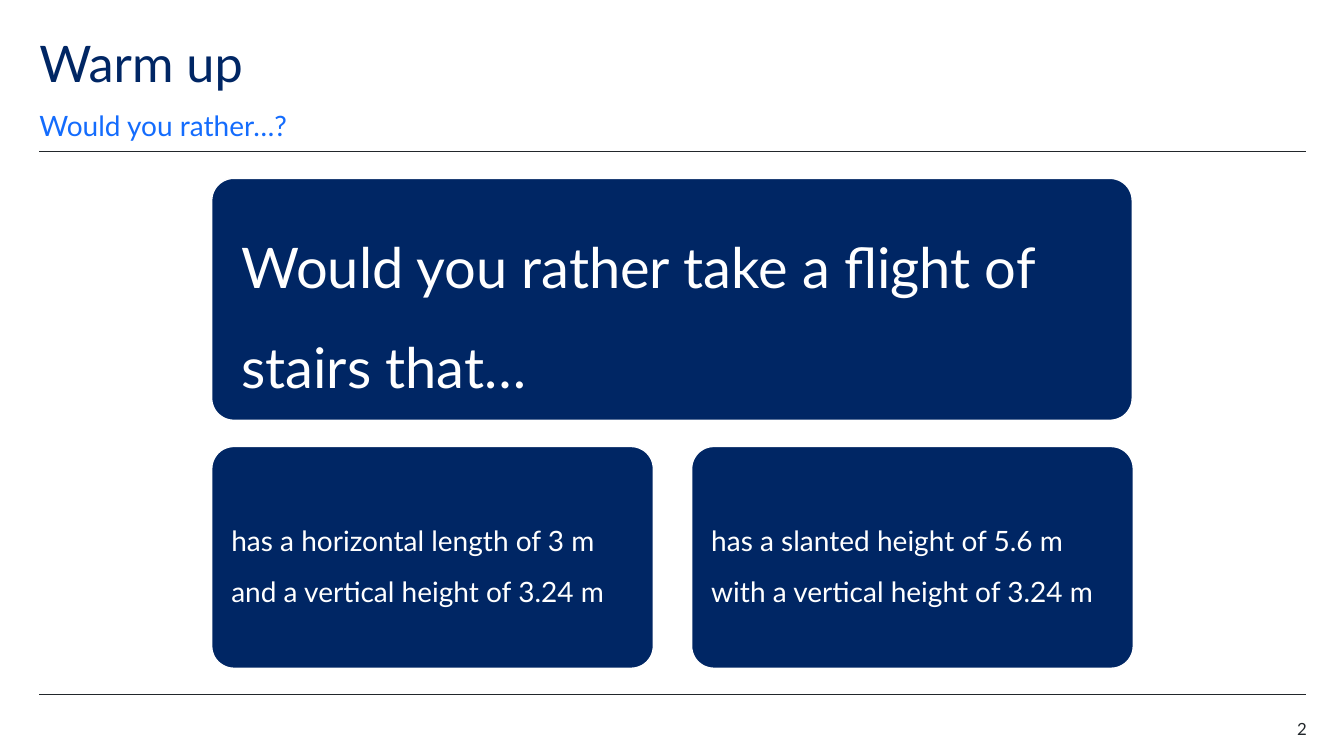
"""Build the warm-up slide with a question and two options."""
from lxml import etree
from pptx import Presentation
from pptx.dml.color import RGBColor
from pptx.enum import shapes, text
from pptx.oxml import ns
from pptx.util import Inches, Pt

COLORS = {"navy": "002664", "blue": "146CFD", "ink": "22272B", "white": "FFFFFF"}
FONT = "Lato"
CARD_RADIUS = 0.22
LEFT, RIGHT = 0.39, 12.95


def rgb(name):
    """Return the named colour."""
    return RGBColor.from_string(COLORS[name])


def write(tf, words, size, color, inset=0, spacing=1.0,
          anchor=text.MSO_ANCHOR.TOP, align=text.PP_ALIGN.LEFT):
    """Fill a text frame with one styled paragraph."""
    tf.word_wrap = True
    tf.vertical_anchor = anchor
    tf.margin_left = tf.margin_right = Inches(inset)
    tf.margin_top = tf.margin_bottom = Inches(inset)
    p = tf.paragraphs[0]
    p.alignment = align
    p.line_spacing = spacing
    r = p.add_run()
    r.text = words
    r.font.name = FONT
    r.font.size = Pt(size)
    r.font.color.rgb = rgb(color)


def add_label(s, box, words, size, color, **style):
    """Add a text box."""
    sp = s.shapes.add_textbox(*map(Inches, box))
    write(sp.text_frame, words, size, color, **style)


def add_rule(s, y):
    """Add a thin horizontal line across the slide."""
    sp = s.shapes.add_connector(shapes.MSO_CONNECTOR.STRAIGHT, Inches(LEFT),
                                Inches(y), Inches(RIGHT), Inches(y))
    sp.line.color.rgb = rgb("ink")
    sp.line.width = Pt(0.5)
    etree.SubElement(sp._element.spPr, ns.qn("a:effectLst"))


def add_card(s, box, words, size, inset):
    """Add a navy rounded card with white text."""
    sp = s.shapes.add_shape(shapes.MSO_SHAPE.ROUNDED_RECTANGLE, *map(Inches, box))
    sp.adjustments[0] = CARD_RADIUS / min(box[2:])
    sp.shadow.inherit = False
    sp.fill.solid()
    sp.fill.fore_color.rgb = rgb("navy")
    sp.line.color.rgb = rgb("white")
    sp.line.width = Pt(1)
    write(sp.text_frame, words, size, "white", inset=inset, spacing=1.5,
          anchor=text.MSO_ANCHOR.MIDDLE)


def main():
    """Build and save the slide."""
    prs = Presentation()
    prs.slide_width, prs.slide_height = Inches(13.33), Inches(7.5)
    s = prs.slides.add_slide(prs.slide_layouts[6])
    for y in (1.5, 6.89):
        add_rule(s, y)
    add_label(s, (LEFT, 0.39, 11.02, 0.6), "Warm up", 36, "navy", spacing=0.9)
    add_label(s, (LEFT, 1.07, 11.02, 0.34), "Would you rather…?", 20, "blue",
              spacing=1.5, anchor=text.MSO_ANCHOR.BOTTOM)
    add_card(s, (2.1, 1.77, 9.13, 2.4),
             "Would you rather take a flight of stairs that…", 40, 0.23)
    options = ("has a horizontal length of 3 m and a vertical height of 3.24 m",
               "has a slanted height of 5.6 m with a vertical height of 3.24 m")
    for i, option in enumerate(options):
        add_card(s, (2.1 + 4.76 * i, 4.43, 4.38, 2.2), option, 20, 0.13)
    add_label(s, (12.17, 7.13, 0.79, 0.2), "2", 12, "ink",
              align=text.PP_ALIGN.RIGHT)
    prs.save("out.pptx")


if __name__ == "__main__":
    main()
